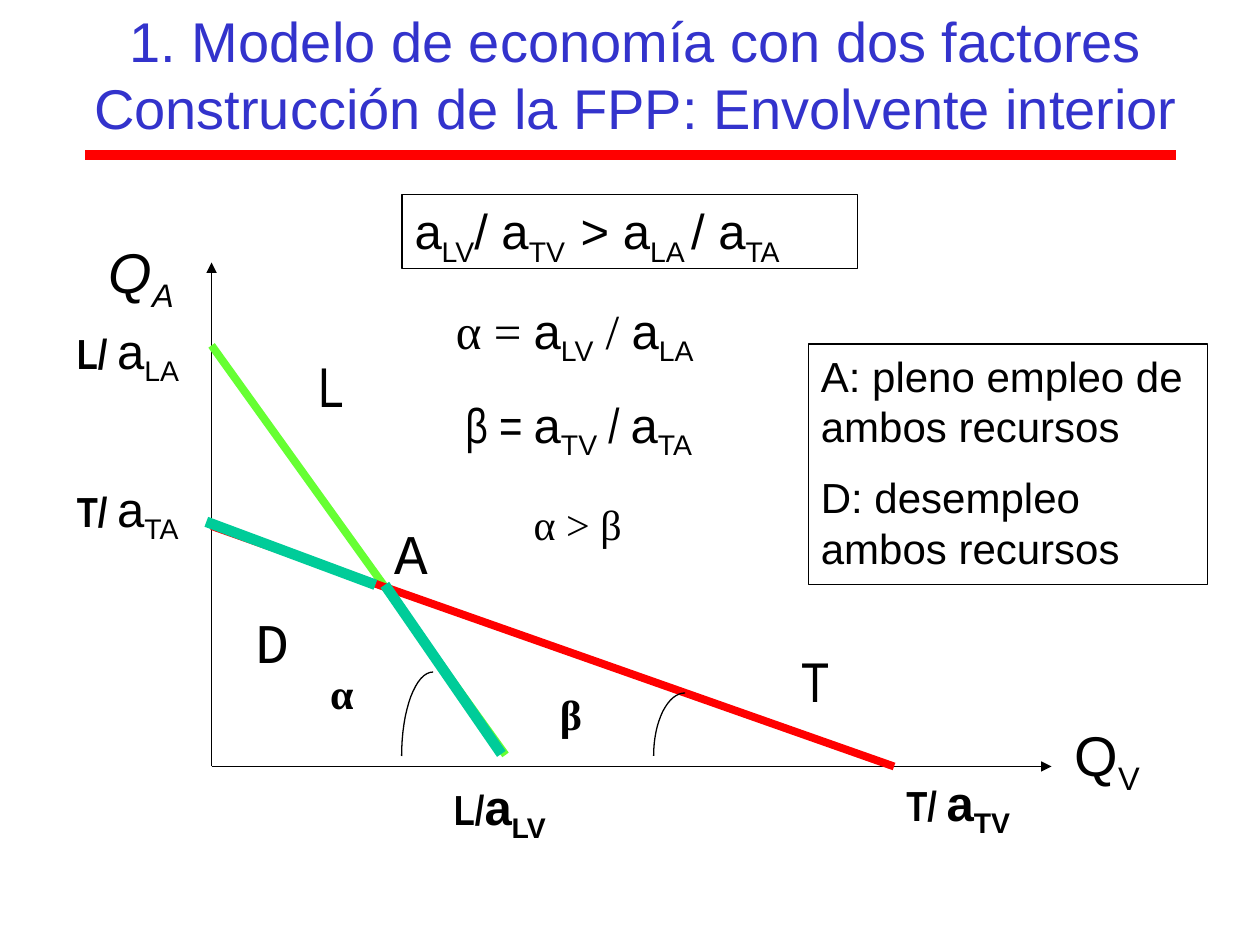
from math import cos, pi, sin
from typing import NamedTuple

from lxml.etree import SubElement
from pptx import Presentation
from pptx.dml.color import RGBColor
from pptx.enum.shapes import MSO_CONNECTOR, MSO_SHAPE
from pptx.enum.text import MSO_ANCHOR as ANCHOR, PP_ALIGN as ALIGN
from pptx.oxml.ns import qn
from pptx.util import Inches, Pt

COLUMNS, ROWS = 120, 90
UNIT = Inches(10) / COLUMNS  # columns and rows have the same size
BLACK, BLUE, RED, GREEN, TEAL = "000000", "3333CC", "FF0000", "66FF33", "00CC99"
SANS, NARROW = "Arial", "Arial Narrow"
SERIF, MONO = "Times New Roman", "Courier New"
SMALL, MEDIUM, LARGE = 24, 28, 32  # text sizes
THIN, THICK, HEAVY = 0.75, 4.5, 6  # line widths
LINE_HEIGHT = {SMALL: 6, MEDIUM: 6.8, LARGE: 7.5}  # rows of a one-line label


class Run(NamedTuple):
    text: str
    size: int = MEDIUM
    font: str = SANS
    bold: bool = False
    italic: bool = False
    subscript: bool = False
    color: str = BLACK


class Box(NamedTuple):
    left: float
    top: float
    width: float
    height: float

    def inner(self, left, top, width, height):
        return Box(self.left + left, self.top + top, width, height)

    def point(self, x, y):
        return self.left + x, self.top + y


def to_emu(lengths):
    return [round(length * UNIT) for length in lengths]


def rgb(color):
    return RGBColor.from_string(color)


def style_outline(shape):
    shape.shadow.inherit = False
    shape.fill.background()
    shape.line.color.rgb = rgb(BLACK)
    shape.line.width = Pt(THIN)


def with_subscript(text, subscript, **style):
    return [Run(text, **style), Run(subscript, subscript=True, **style)]


def add_run(paragraph, content):
    """Add the content as one run for each of its lines."""
    for index, line in enumerate(content.text.split("\n")):
        if index:
            paragraph.add_line_break()
        run = paragraph.add_run()
        run.text = line
        font = run.font
        font.name, font.size = content.font, Pt(content.size)
        font.bold, font.italic = content.bold, content.italic
        font.color.rgb = rgb(content.color)
        if content.subscript:
            font._element.set("baseline", "-25000")


def fill_text(shape, paragraphs, align=ALIGN.LEFT, anchor=ANCHOR.TOP, wrap=True):
    frame = shape.text_frame
    frame.word_wrap = wrap
    frame.vertical_anchor = anchor
    for index, runs in enumerate(paragraphs):
        paragraph = frame.add_paragraph() if index else frame.paragraphs[0]
        paragraph.alignment = align
        paragraph.space_before = Pt(12 if index else 0)
        for content in runs:
            add_run(paragraph, content)


def add_label(slide, box, runs, **layout):
    fill_text(slide.shapes.add_textbox(*to_emu(box)), [runs], **layout)


def add_framed_text(slide, box, paragraphs):
    frame = slide.shapes.add_shape(MSO_SHAPE.RECTANGLE, *to_emu(box))
    style_outline(frame)
    fill_text(frame, paragraphs)


def add_line(slide, start, end, color, width, arrow=False):
    line = slide.shapes.add_connector(MSO_CONNECTOR.STRAIGHT, *to_emu(start + end))
    line.line.color.rgb = rgb(color)
    line.line.width = Pt(width)
    if arrow:
        SubElement(line.line._get_or_add_ln(), qn("a:tailEnd"), type="triangle")
    SubElement(line._element.spPr, qn("a:effectLst"))


def add_angle_mark(slide, box, steps=16):
    """Quarter ellipse from the bottom left to the top right of the box."""
    angles = [pi / 2 * step / steps for step in range(steps + 1)]
    points = [to_emu(box.point(box.width * (1 - cos(angle)),
                               box.height * (1 - sin(angle)))) for angle in angles]
    builder = slide.shapes.build_freeform(*points[0])
    builder.add_line_segments(points[1:], close=False)
    style_outline(builder.convert_to_shape())


def add_header(slide, box):
    rule_row = box.height + 0.75
    add_line(slide, box.point(1, rule_row), box.point(box.width - 2.1, rule_row),
             RED, HEAVY)
    title = ("1. Modelo de economía con dos factores\n"
             "Construcción de la FPP: Envolvente interior")
    add_label(slide, box, [Run(title, LARGE, color=BLUE)],
              align=ALIGN.CENTER, anchor=ANCHOR.MIDDLE)


def add_axes(slide, box):
    origin, top, right = (0, box.height), (0, 0), (box.width, box.height)
    for end in (top, right):
        add_line(slide, box.point(*origin), box.point(*end), BLACK, THIN, arrow=True)
    for left, row, factor, italic in ((-11, -3, "A", True), (81, 43, "V", False)):
        add_label(slide, box.inner(left, row, 10, LINE_HEIGHT[LARGE]),
                  with_subscript("Q", factor, size=LARGE, italic=italic))


def add_constraints(slide, box):
    """Resource limits, the frontier inside both, and the angles they form."""
    lines = {
        "labour limit": ((0, 7.9), (28, 46.9), GREEN, THICK),
        "land limit": ((0, 25.1), (65, 48), RED, THICK),
        "frontier above A": ((-0.5, 24.7), (15.6, 30.7), TEAL, HEAVY),
        "frontier below A": ((16.5, 30.7), (27.6, 46.8), TEAL, HEAVY),
    }
    for start, end, color, width in lines.values():
        add_line(slide, box.point(*start), box.point(*end), color, width)

    baseline = 47
    for left, height in ((18.1, 8), (42.1, 6)):
        add_angle_mark(slide, box.inner(left, baseline - height, 3, height))


def add_intercepts(slide, box):
    for left, top, width, resource, coefficient, bold in (
            (-14, 4.9, 13, "L/ ", "LA", False),
            (-14, 20, 14, "T/ ", "TA", False),
            (21.9, 48.4, 19, "L/", "LV", True),
            (65, 48, 16, "T/ ", "TV", True)):
        add_label(slide, box.inner(left, top, width, LINE_HEIGHT[MEDIUM]),
                  [Run(resource, SMALL, NARROW, bold=True),
                   *with_subscript("a", coefficient, bold=bold)])


def add_slopes(slide, box):
    for left, top, width, name, font, resource in (
            (22.1, 3, 31, "α", SERIF, "L"), (23, 12, 29, "β", NARROW, "T")):
        add_label(slide, box.inner(left, top, width, LINE_HEIGHT[MEDIUM]),
                  [Run(f"{name} = ", font=font),
                   *with_subscript("a", resource + "V"),
                   Run(" / ", font=font),
                   *with_subscript("a", resource + "A")])
    for left, top, width, text, bold in (
            (10.1, 38, 4.9, "α", True),
            (32, 40, 4.7, "β", True),
            (29.5, 21.9, 11.4, "α > β", False)):
        add_label(slide, box.inner(left, top, width, LINE_HEIGHT[SMALL]),
                  [Run(text, SMALL, SERIF, bold)], wrap=False)


def add_letters(slide, box):
    for left, top, letter, font in (
            (9, 7.9, "L", NARROW), (55, 36, "T", NARROW),
            (16.2, 23.8, "A", MONO), (3, 32.3, "D", MONO)):
        add_label(slide, box.inner(left, top, 8, LINE_HEIGHT[LARGE]),
                  [Run(letter, LARGE, font)])


def add_condition(slide, box):
    terms = (("a", "LV"), ("/ a", "TV  "), ("> a", "LA "), ("/ a", "TA"))
    runs = [run for term in terms for run in with_subscript(*term)]
    add_framed_text(slide, box, [runs])


def add_legend(slide, box):
    meanings = ("A: pleno empleo de ambos recursos", "D: desempleo ambos recursos")
    add_framed_text(slide, box, [[Run(meaning, SMALL)] for meaning in meanings])


def main():
    presentation = Presentation()
    presentation.slide_width, presentation.slide_height = to_emu((COLUMNS, ROWS))
    slide = presentation.slides.add_slide(presentation.slide_layouts[6])
    add_header(slide, Box(7.1, 0, 107, 14))
    diagram = Box(20.15, 25, 80, 48)
    for add_part in (add_axes, add_constraints, add_intercepts, add_slopes, add_letters):
        add_part(slide, diagram)
    add_condition(slide, Box(38.3, 18.55, 43.4, 7))
    add_legend(slide, Box(77, 32.75, 38, 22.9))
    presentation.save("out.pptx")


if __name__ == "__main__":
    main()
